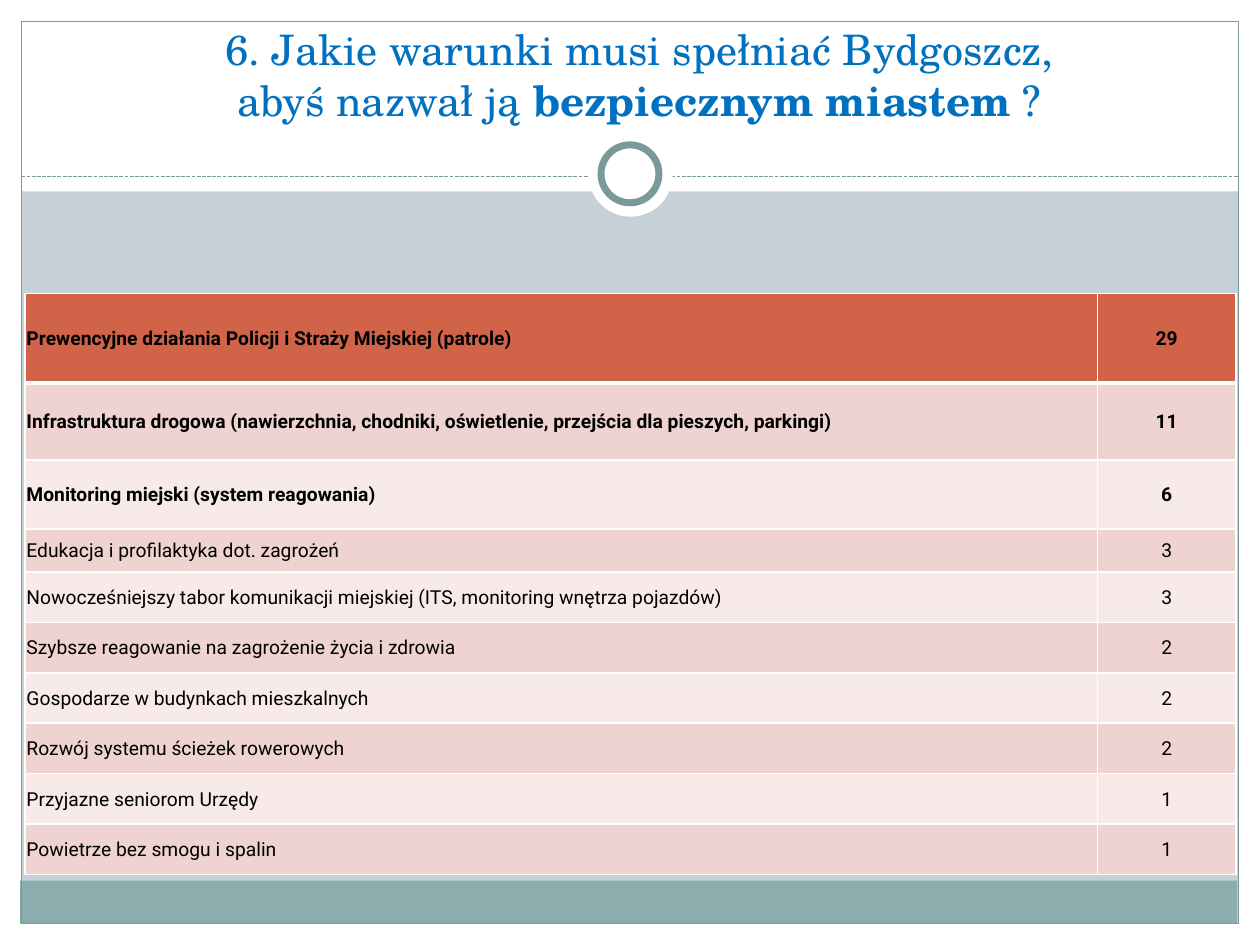
from lxml.etree import SubElement
from pptx import Presentation
from pptx.dml.color import RGBColor
from pptx.enum.dml import MSO_LINE
from pptx.enum.shapes import MSO_CONNECTOR, MSO_SHAPE
from pptx.enum.text import MSO_ANCHOR, PP_ALIGN
from pptx.oxml.ns import qn
from pptx.util import Inches, Pt

COLORS = {
    "background": "C5D1D7", "white": "FFFFFF", "footer": "8CADAE", "frame": "7C999A",
    "title": "0070C0", "text": "000000",
    "header": "D16349", "band_dark": "EED3D0", "band_light": "F7EAE9",
}
TITLE_FONT, TABLE_FONT = "TeX Gyre Schola", "Roboto"

# Title runs: text, bold
TITLE = [
    ("6. Jakie warunki musi spełniać Bydgoszcz,", False),
    ("\n", False),
    ("abyś nazwał ją ", False),
    ("bezpiecznym miastem ", True),
    ("?", False),
]

# Answer, number of votes, row height
ANSWERS = [
    ("Prewencyjne działania Policji i Straży Miejskiej (patrole)", 29, 0.71),
    ("Infrastruktura drogowa (nawierzchnia, chodniki, oświetlenie, przejścia dla pieszych, parkingi)", 11, 0.61),
    ("Monitoring miejski (system reagowania)", 6, 0.55),
    ("Edukacja i profilaktyka dot. zagrożeń", 3, 0.34),
    ("Nowocześniejszy tabor komunikacji miejskiej (ITS, monitoring wnętrza pojazdów)", 3, 0.4),
    ("Szybsze reagowanie na zagrożenie życia i zdrowia", 2, 0.4),
    ("Gospodarze w budynkach mieszkalnych", 2, 0.4),
    ("Rozwój systemu ścieżek rowerowych", 2, 0.4),
    ("Przyjazne seniorom Urzędy", 1, 0.4),
    ("Powietrze bez smogu i spalin", 1, 0.4),
]
BOLD_ROWS = 3
COLUMN_WIDTHS = (8.51, 1.1)

# Background parts: shape, (left, top, width, height), fill, line width
RECT, OVAL = MSO_SHAPE.RECTANGLE, MSO_SHAPE.OVAL
MARGINS = [
    (RECT, (0, 7.33, 10, 0.17), "white", 0),
    (RECT, (0, 0, 10, 1.52), "white", 0),
    (RECT, (0, 0, 0.17, 7.5), "white", 0),
    (RECT, (9.83, 0, 0.17, 7.5), "white", 0),
    (RECT, (0.16, 6.99, 9.66, 0.34), "footer", 0),
    (RECT, (0.17, 0.17, 9.66, 7.16), None, 0.75),
]
RING = [
    (OVAL, (4.67, 1.05, 0.67, 0.67), "white", 0),
    (OVAL, (4.77, 1.15, 0.46, 0.46), "white", 4),
]


def rgb(name):
    return RGBColor.from_string(COLORS[name])


def add_parts(s, parts):
    for kind, box, fill, line_width in parts:
        sp = s.shapes.add_shape(kind, *map(Inches, box))
        sp.shadow.inherit = False
        if fill:
            sp.fill.solid()
            sp.fill.fore_color.rgb = rgb(fill)
        else:
            sp.fill.background()
        if line_width:
            sp.line.color.rgb = rgb("frame")
            sp.line.width = Pt(line_width)
        else:
            sp.line.fill.background()


def add_divider(s):
    y = Inches(1.4)
    line = s.shapes.add_connector(MSO_CONNECTOR.STRAIGHT, Inches(0.17), y, Inches(9.83), y)
    line.line.color.rgb = rgb("frame")
    line.line.width = Pt(0.75)
    line.line.dash_style = MSO_LINE.SQUARE_DOT
    SubElement(line.element.spPr, qn("a:effectLst"))


def add_title(s):
    title = s.shapes.title
    title.element.getparent().append(title.element)  # in front of the background
    title.left, title.top, title.width, title.height = map(Inches, (0.35, 0.29, 9.45, 0.75))
    tf = title.text_frame
    tf.word_wrap = True
    tf.vertical_anchor = MSO_ANCHOR.BOTTOM
    p = tf.paragraphs[0]
    p.alignment = PP_ALIGN.CENTER
    p.font.size = Pt(24)
    p.font.name = TITLE_FONT
    p.font.color.rgb = rgb("title")
    for text, bold in TITLE:
        if text == "\n":
            p.add_line_break()
            continue
        r = p.add_run()
        r.text = text
        r.font.bold = bold


def set_borders(cell, widths):
    tc_pr = cell._tc.get_or_add_tcPr()
    for side, width in widths.items():
        ln = SubElement(tc_pr, qn(f"a:ln{side}"), w=str(Pt(width)))
        fill = SubElement(ln, qn("a:solidFill"))
        SubElement(fill, qn("a:srgbClr"), val=COLORS["white"])


def format_cell(cell, text, row, column):
    set_borders(cell, {"L": 1, "R": 1, "T": 3 if row == 1 else 1, "B": 3 if row == 0 else 1})
    cell.fill.solid()
    cell.fill.fore_color.rgb = rgb("header" if row == 0 else "band_dark" if row % 2 else "band_light")
    cell.vertical_anchor = MSO_ANCHOR.MIDDLE
    cell.margin_left = cell.margin_right = cell.margin_top = Inches(0.01)
    cell.margin_bottom = 0
    cell.text = text
    p = cell.text_frame.paragraphs[0]
    p.alignment = PP_ALIGN.CENTER if column else PP_ALIGN.LEFT
    p.font.size = Pt(11)
    p.font.name = TABLE_FONT
    p.font.bold = row < BOLD_ROWS
    p.font.color.rgb = rgb("text")


def add_answers(s):
    height = sum(answer[2] for answer in ANSWERS)
    table = s.shapes.add_table(len(ANSWERS), 2, Inches(0.2), Inches(2.33),
                               Inches(sum(COLUMN_WIDTHS)), Inches(height)).table
    table.first_row = table.horz_banding = False
    for column, width in zip(table.columns, COLUMN_WIDTHS):
        column.width = Inches(width)
    for i, (answer, votes, row_height) in enumerate(ANSWERS):
        table.rows[i].height = Inches(row_height)
        for j, text in enumerate((answer, str(votes))):
            format_cell(table.cell(i, j), text, i, j)


def main():
    prs = Presentation()
    prs.slide_width, prs.slide_height = Inches(10), Inches(7.5)
    s = prs.slides.add_slide(prs.slide_layouts[5])
    s.background.fill.solid()
    s.background.fill.fore_color.rgb = rgb("background")
    add_parts(s, MARGINS)
    add_divider(s)
    add_parts(s, RING)
    add_title(s)
    add_answers(s)
    prs.save("out.pptx")


if __name__ == "__main__":
    main()
